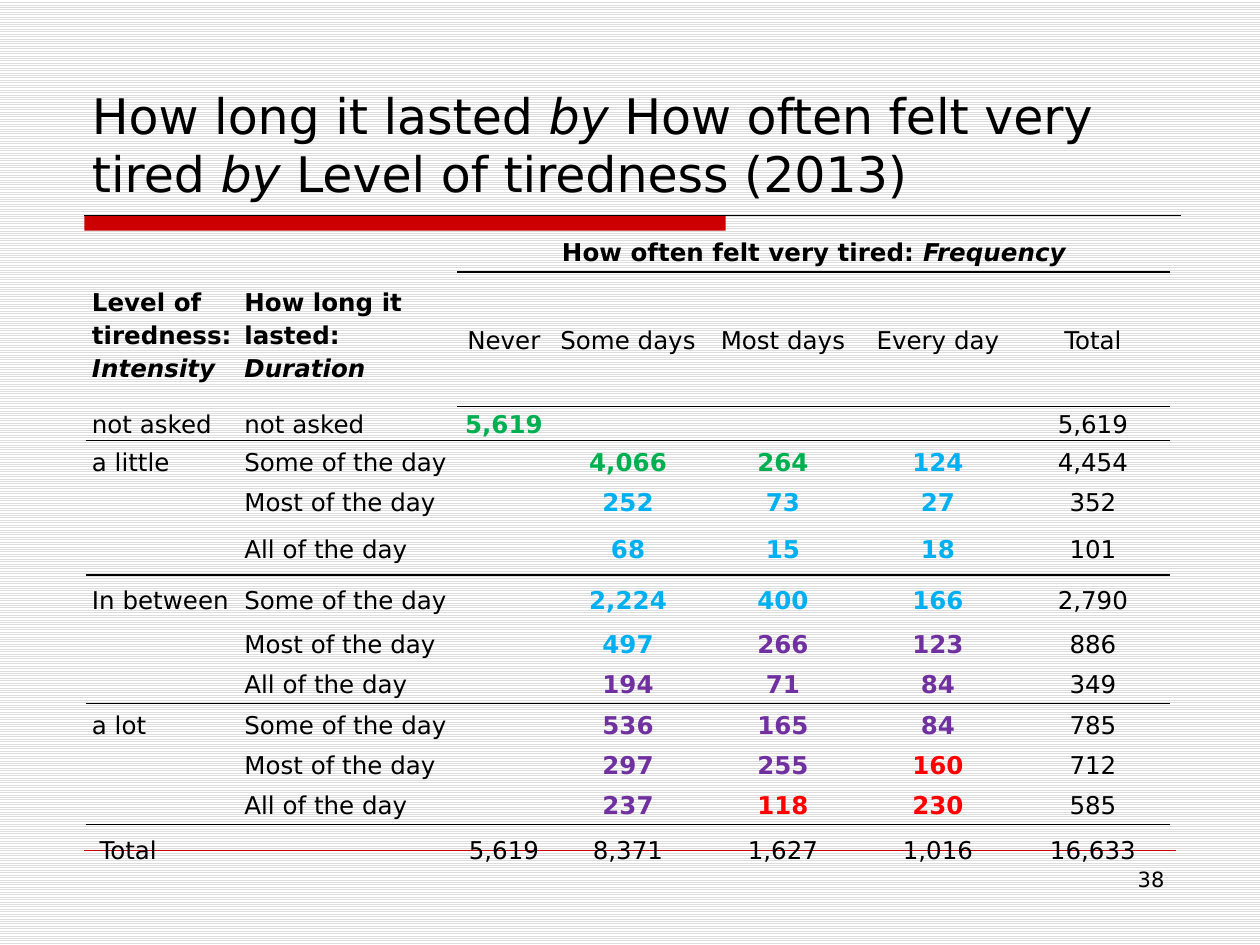
from lxml import etree
from pptx import Presentation
from pptx.dml.color import RGBColor
from pptx.enum.dml import MSO_PATTERN
from pptx.enum.shapes import MSO_CONNECTOR, MSO_SHAPE
from pptx.enum.text import MSO_ANCHOR, MSO_AUTO_SIZE, PP_ALIGN
from pptx.oxml.ns import qn
from pptx.util import Inches, Pt

LEFT, CENTER, RIGHT = PP_ALIGN.LEFT, PP_ALIGN.CENTER, PP_ALIGN.RIGHT
MIDDLE, BOTTOM = MSO_ANCHOR.MIDDLE, MSO_ANCHOR.BOTTOM
STRAIGHT, RECTANGLE = MSO_CONNECTOR.STRAIGHT, MSO_SHAPE.RECTANGLE
LIGHT_HORIZONTAL = MSO_PATTERN.LIGHT_HORIZONTAL
NO_AUTOFIT = MSO_AUTO_SIZE.NONE

FONT = "DejaVu Sans"
PLAIN_TABLE_STYLE = "{2D5ABB26-0587-4C30-8999-92F81FD0307C}"
COLORS = {
    "text": "000000", "accent": "CC0000", "stripe": "DDDDDD", "paper": "FFFFFF",
    "G": "00B050", "B": "00B0F0", "P": "7030A0", "R": "FF0000",
}

COLUMN_WIDTHS = [1.21, 1.74, 0.74] + [1.23] * 4
ROW_HEIGHTS = [0.34, 0.84, 0.27, 0.32, 0.32, 0.43, 0.38] + [0.32] * 5 + [0.39]
RULED_ROWS = (1, 2, 5, 8, 11)
FREQUENCIES = ["Never", "Some days", "Most days", "Every day", "Total"]
DURATIONS = ["Some of the day", "Most of the day", "All of the day"]
# Each count row: Never to Total, then the severity colour of the first four counts.
NOT_ASKED = (["5,619", "", "", "", "5,619"], "G   ")
COUNTS = {
    "a little": [
        (["", "4,066", "264", "124", "4,454"], " GGB"),
        (["", "252", "73", "27", "352"], " BBB"),
        (["", "68", "15", "18", "101"], " BBB"),
    ],
    "In between": [
        (["", "2,224", "400", "166", "2,790"], " BBB"),
        (["", "497", "266", "123", "886"], " BPP"),
        (["", "194", "71", "84", "349"], " PPP"),
    ],
    "a lot": [
        (["", "536", "165", "84", "785"], " PPP"),
        (["", "297", "255", "160", "712"], " PPR"),
        (["", "237", "118", "230", "585"], " PRR"),
    ],
}
TOTALS = ["5,619", "8,371", "1,627", "1,016", "16,633"]


def rgb(name):
    return RGBColor.from_string(COLORS[name])


def add_run(paragraph, text, size, color="text", **styles):
    run = paragraph.add_run()
    run.text = text
    for name, value in {"name": FONT, "size": Pt(size), **styles}.items():
        setattr(run.font, name, value)
    run.font.color.rgb = rgb(color)


def add_rule(slide, left, top, width, color, weight):
    rule = slide.shapes.add_connector(
        STRAIGHT, Inches(left), Inches(top), Inches(left + width), Inches(top))
    rule.line.color.rgb = rgb(color)
    rule.line.width = Pt(weight)
    etree.SubElement(rule._element.spPr, qn("a:effectLst"))


def add_background(slide):
    fill = slide.background.fill
    fill.patterned()
    fill.pattern = LIGHT_HORIZONTAL
    fill.fore_color.rgb = rgb("stripe")
    fill.back_color.rgb = rgb("paper")


def add_title_bar(slide, left, top, width, height):
    bar = slide.shapes.add_shape(
        RECTANGLE, Inches(left), Inches(top), Inches(5.09), Inches(height))
    bar.shadow.inherit = False
    bar.fill.solid()
    bar.fill.fore_color.rgb = rgb("accent")
    bar.line.fill.background()
    add_rule(slide, left, top, width, "text", 0.75)


def fill_title(slide, left, top, width, height):
    title = slide.shapes.title
    box = {"left": left, "top": top, "width": width, "height": height}
    for name, value in box.items():
        setattr(title, name, Inches(value))
    frame = title.text_frame
    frame.auto_size = NO_AUTOFIT
    frame.vertical_anchor = BOTTOM
    paragraph = frame.paragraphs[0]
    paragraph.alignment = LEFT
    pieces = ["How long it lasted ", "by", " How often felt very tired ", "by",
              " Level of tiredness (2013)"]
    for piece in pieces:
        add_run(paragraph, piece, 28, italic=piece == "by")


def add_page_number(slide, left, top, width, height):
    number = slide.shapes.add_textbox(
        Inches(left), Inches(top), Inches(width), Inches(height))
    number.text_frame.word_wrap = True
    paragraph = number.text_frame.paragraphs[0]
    paragraph.alignment = RIGHT
    add_run(paragraph, "38", 12)


def format_cell(cell):
    margins = {"margin_left": 0.05, "margin_right": 0.05, "margin_top": 0, "margin_bottom": 0}
    for name, value in margins.items():
        setattr(cell, name, Inches(value))
    cell.vertical_anchor = MIDDLE
    cell.fill.background()
    # Keeps empty cells from stretching their row.
    cell.text_frame.paragraphs[0]._p.get_or_add_endParaRPr().set("sz", "1400")


def write(cell, text, align=LEFT, color="text", bold=False, italic_tail=None, new_line=False):
    frame = cell.text_frame
    paragraph = frame.paragraphs[0]
    add_run(paragraph, text, 14, color, bold=bold)
    if italic_tail:
        if new_line:
            paragraph = frame.add_paragraph()
        add_run(paragraph, italic_tail, 14, bold=bold, italic=True)
    for paragraph in frame.paragraphs:
        paragraph.alignment = align
        paragraph.line_spacing = 1.15


def rule_below(cell):
    properties = cell._tc.get_or_add_tcPr()
    border = etree.Element(qn("a:lnB"), w=str(Pt(1)))
    solid = etree.SubElement(border, qn("a:solidFill"))
    etree.SubElement(solid, qn("a:srgbClr"), val=COLORS["text"])
    properties.insert(0, border)


def write_headers(table):
    intensity, duration, frequency = (table.cell(0, column) for column in range(3))
    intensity.merge(table.cell(1, 0))
    duration.merge(table.cell(1, 1))
    frequency.merge(table.cell(0, 6))
    write(intensity, "Level of tiredness:", bold=True, italic_tail="Intensity", new_line=True)
    write(duration, "How long it lasted: ", bold=True, italic_tail="Duration")
    for header in (intensity, duration):
        header.margin_top = Inches(0.26)
    write(frequency, "How often felt very tired: ", CENTER, bold=True, italic_tail="Frequency")
    for column, label in enumerate(FREQUENCIES, 2):
        write(table.cell(1, column), label, CENTER)


def write_row(table, row, intensity, duration, counts, severities="    "):
    for column, label in enumerate((intensity, duration)):
        if label:
            write(table.cell(row, column), label)
    for column, (count, severity) in enumerate(zip(counts, severities + " "), 2):
        if count:
            colored = severity != " "
            write(table.cell(row, column), count, CENTER,
                  severity if colored else "text", bold=colored)


def add_tiredness_table(slide, left, top, width, height):
    table = slide.shapes.add_table(
        len(ROW_HEIGHTS), len(COLUMN_WIDTHS),
        Inches(left), Inches(top), Inches(width), Inches(height)).table
    table.first_row = table.horz_banding = False
    table._tbl.tblPr.find(qn("a:tableStyleId")).text = PLAIN_TABLE_STYLE
    for column, column_width in zip(table.columns, COLUMN_WIDTHS):
        column.width = Inches(column_width)
    for row, row_height in zip(table.rows, ROW_HEIGHTS):
        row.height = Inches(row_height)
    for cell in table.iter_cells():
        format_cell(cell)

    write_headers(table)
    write_row(table, 2, "not asked", "not asked", *NOT_ASKED)
    for group, (intensity, rows) in enumerate(COUNTS.items()):
        for step, (duration, counts) in enumerate(zip(DURATIONS, rows)):
            write_row(table, 3 + 3 * group + step, "" if step else intensity, duration, *counts)
    write_row(table, 12, "Total", "", TOTALS)
    table.cell(12, 0).margin_left = Inches(0.11)

    for column in range(len(COLUMN_WIDTHS)):
        for row in RULED_ROWS if column < 2 else (0, *RULED_ROWS):
            rule_below(table.cell(row, column))


def main():
    deck = Presentation()
    deck.slide_width, deck.slide_height = Inches(10), Inches(7.5)
    slide = deck.slides.add_slide(deck.slide_layouts[5])
    add_background(slide)
    add_title_bar(slide, 0.67, 1.71, 8.7, 0.12)
    add_rule(slide, 0.67, 6.75, 8.66, "accent", 0.25)
    fill_title(slide, 0.63, 0.33, 8.75, 1.33)
    add_page_number(slide, 7.17, 6.83, 2.17, 0.52)
    add_tiredness_table(slide, 0.68, 1.82, 8.61, 4.9)
    deck.save("out.pptx")


if __name__ == "__main__":
    main()
